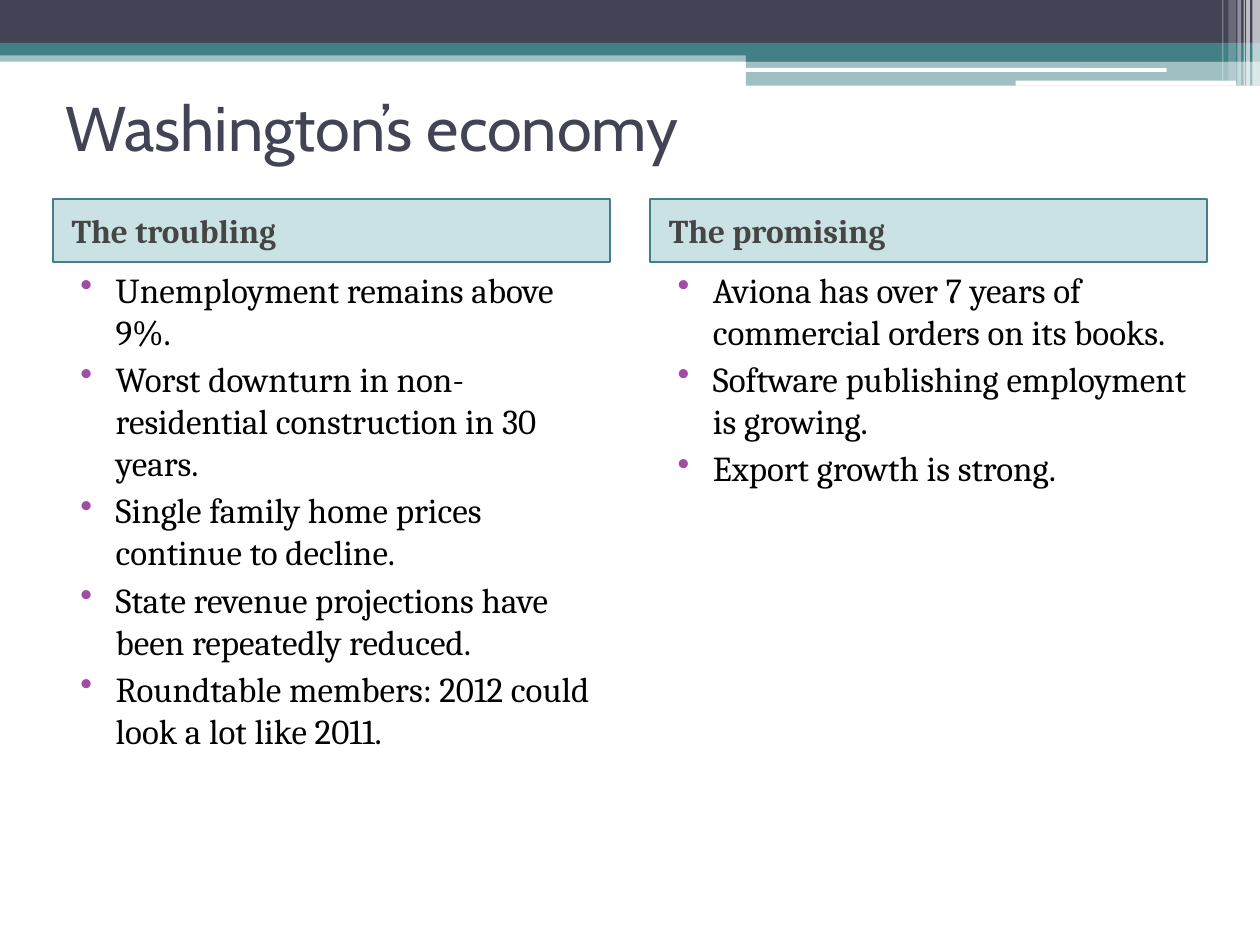
from lxml import etree
from pptx import Presentation
from pptx.dml.color import RGBColor
from pptx.enum.shapes import MSO_SHAPE as Shape
from pptx.enum.text import MSO_ANCHOR as Anchor, PP_ALIGN as Align
from pptx.oxml.ns import qn
from pptx.util import Inches, Pt

NAVY = RGBColor(0x42, 0x44, 0x56)
TEAL = RGBColor(0x43, 0x80, 0x86)
AQUA = RGBColor(0x32, 0x8E, 0x97)
PURPLE = RGBColor(0xA0, 0x4D, 0xA3)
GREY = RGBColor(0x45, 0x45, 0x45)
BLACK = RGBColor(0, 0, 0)
WHITE = RGBColor(0xFF, 0xFF, 0xFF)

MARGIN = 0.42
COLUMN_WIDTH = 4.42
COLUMN_STEP = 4.74
COLUMNS = [
    ("The troubling", [
        "Unemployment remains above 9%.",
        "Worst downturn in non-residential construction in 30 years.",
        "Single family home prices continue to decline.",
        "State revenue projections have been repeatedly reduced.",
        "Roundtable members: 2012 could look a lot like 2011.",
    ]),
    ("The promising", [
        "Aviona has over 7 years of commercial orders on its books.",
        "Software publishing employment is growing.",
        "Export growth is strong.",
    ]),
]


class SlideBuilder:
    title_font = "Cabin"
    body_font = "Cambria"

    def __init__(self, slide):
        self.slide = slide

    def style(self, paragraph, size, color, name, bold=False):
        font = paragraph.font
        font.name, font.size, font.bold = name, Pt(size), bold
        font.color.rgb = color

    def indent(self, paragraph, left, first):
        properties = paragraph._p.get_or_add_pPr()
        properties.set("marL", str(Inches(left)))
        properties.set("indent", str(Inches(first)))
        return properties

    def band(self, box, color, opacity=100, kind=Shape.RECTANGLE):
        shape = self.slide.shapes.add_shape(kind, *map(Inches, box))
        shape.shadow.inherit = False
        shape.fill.solid()
        shape.fill.fore_color.rgb = color
        shape.line.fill.background()
        if opacity < 100:
            fill = shape._element.spPr.find(qn("a:solidFill"))
            etree.SubElement(fill[0], qn("a:alpha"), val=str(opacity * 1000))
        return shape

    def title(self, text, box):
        title = self.slide.shapes.title
        title.left, title.top, title.width, title.height = map(Inches, box)
        frame = title.text_frame
        frame.text = text
        frame.vertical_anchor = Anchor.MIDDLE
        paragraph = frame.paragraphs[0]
        paragraph.alignment = Align.LEFT
        self.style(paragraph, 36, NAVY, self.title_font)

    def heading(self, text, box):
        shape = self.band(box, AQUA, 25)
        shape.line.color.rgb = TEAL
        shape.line.width = Pt(1)
        frame = shape.text_frame
        frame.text = text
        frame.vertical_anchor = Anchor.MIDDLE
        paragraph = frame.paragraphs[0]
        paragraph.alignment = Align.LEFT
        self.indent(paragraph, 0.05, 0)
        self.style(paragraph, 19, GREY, self.body_font, bold=True)

    def bullets(self, items, box):
        frame = self.slide.shapes.add_textbox(*map(Inches, box)).text_frame
        frame.word_wrap = True
        for index, item in enumerate(items):
            paragraph = frame.add_paragraph() if index else frame.paragraphs[0]
            paragraph.text = item
            if index:
                paragraph.space_before = Pt(3)
            properties = self.indent(paragraph, 0.4, -0.28)
            color = etree.SubElement(properties, qn("a:buClr"))
            etree.SubElement(color, qn("a:srgbClr"), val=str(PURPLE))
            etree.SubElement(properties, qn("a:buChar"), char="•")
            self.style(paragraph, 20, BLACK, self.body_font)


def main():
    presentation = Presentation()
    presentation.slide_width, presentation.slide_height = Inches(10), Inches(7.5)
    slide = presentation.slides.add_slide(presentation.slide_layouts[5])
    builder = SlideBuilder(slide)

    # Header bands
    for box, color, opacity in [
        ((0, 0.4, 10, 0.09), TEAL, 50),
        ((0, 0, 10, 0.34), NAVY, 100),
        ((0, 0.34, 10, 0.1), TEAL, 100),
        ((5.92, 0.39, 4.08, 0.1), TEAL, 100),
        ((5.92, 0.48, 4.08, 0.2), TEAL, 50),
    ]:
        builder.band(box, color, opacity)

    # White strips cut into the bands
    for box in [(5.91, 0.54, 3.35, 0.03), (8.06, 0.64, 1.75, 0.04)]:
        builder.band(box, WHITE, kind=Shape.ROUNDED_RECTANGLE)

    # Translucent stripes at the right edge
    for left, width, height, opacity in [
        (9.94, 0.06, 0.68, 65),
        (9.89, 0.03, 0.68, 65),
        (9.87, 0.01, 0.68, 60),
        (9.82, 0.03, 0.68, 40),
        (9.75, 0.06, 0.64, 20),
        (9.7, 0.01, 0.64, 30),
    ]:
        builder.band((left, 0, width, height), WHITE, opacity)

    # Title and the two columns
    builder.title("Washington’s economy", (MARGIN, 0.42, 9.17, 1.17))
    for index, (heading, items) in enumerate(COLUMNS):
        left = MARGIN + index * COLUMN_STEP
        builder.heading(heading, (left, 1.58, COLUMN_WIDTH, 0.5))
        builder.bullets(items, (left, 2.08, COLUMN_WIDTH, 5))

    presentation.save("out.pptx")


if __name__ == "__main__":
    main()
